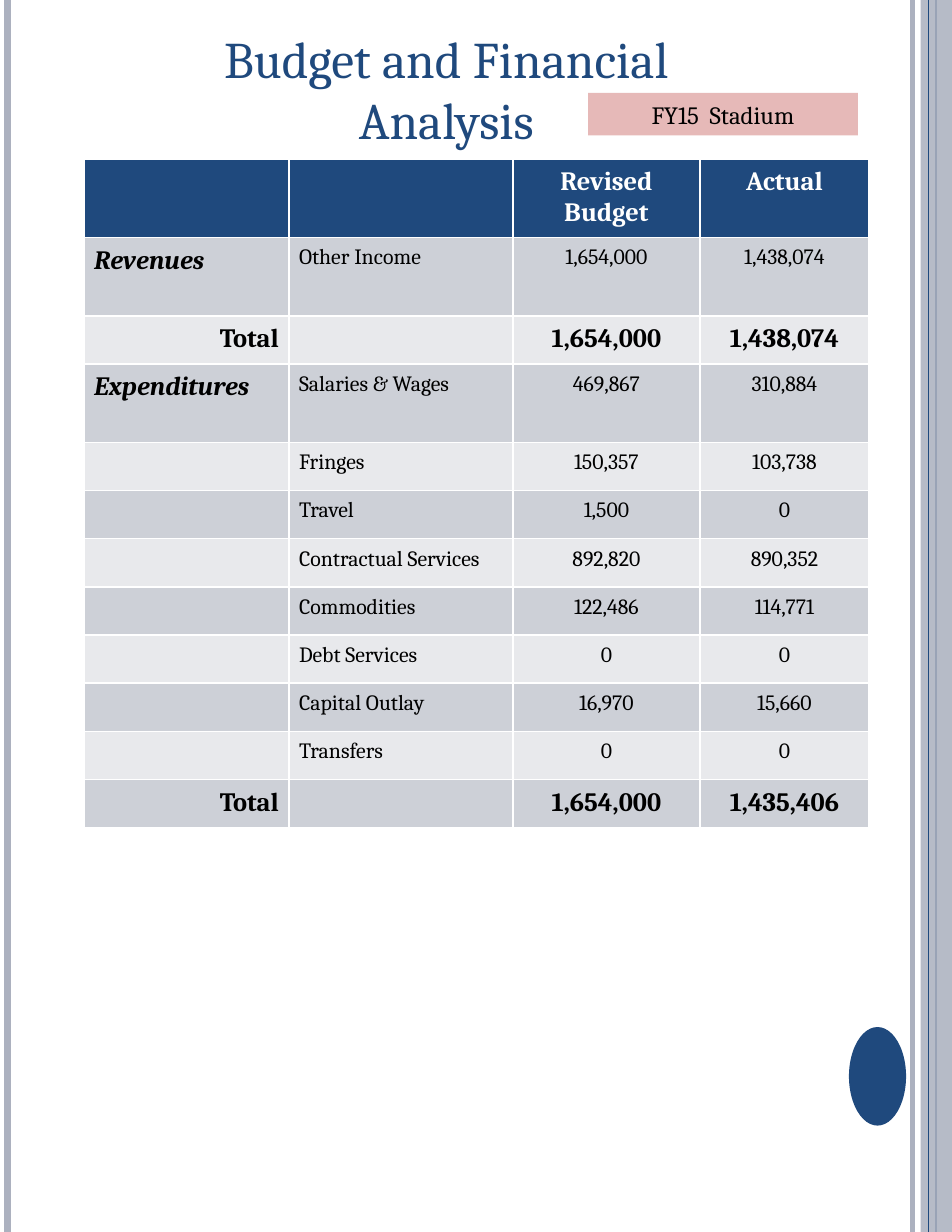
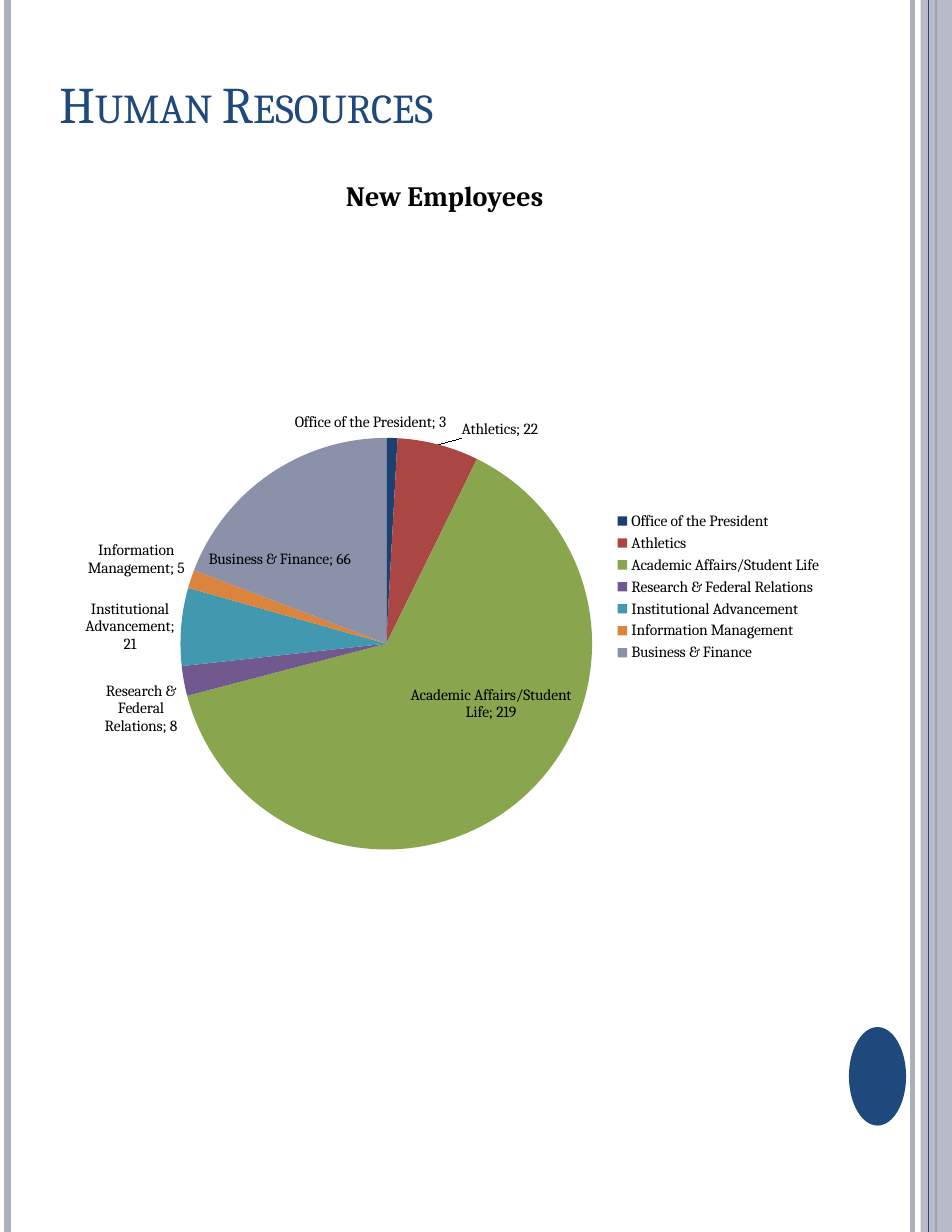
"""Build a stadium budget table slide and a new employees pie chart slide."""
from lxml import etree
from pptx import Presentation
from pptx.chart.data import CategoryChartData
from pptx.dml.color import RGBColor
from pptx.enum import chart as charts, shapes, text
from pptx.oxml import parse_xml
from pptx.oxml.ns import nsdecls, qn
from pptx.util import Pt

PX = 9144
FONT = "Cambria"
NAVY = RGBColor(0x1F, 0x49, 0x7D)
GREY = RGBColor(0xAC, 0xB1, 0xBF)
PINK = RGBColor(0xE6, 0xB9, 0xB8)
DARK_ROW = RGBColor(0xCD, 0xD0, 0xD7)
LIGHT_ROW = RGBColor(0xE8, 0xE9, 0xEC)
WHITE = RGBColor(0xFF, 0xFF, 0xFF)
BLACK = RGBColor(0, 0, 0)
SLICES = [RGBColor.from_string(c) for c in (
    "1C4170", "AA4643", "89A54E", "71588F", "4198AF", "DB843D", "8A91A9")]
LEFT, CENTER, RIGHT = text.PP_ALIGN.LEFT, text.PP_ALIGN.CENTER, text.PP_ALIGN.RIGHT


def write(tf, words, align=LEFT, color=BLACK, **formats):
    p = tf.paragraphs[0]
    p.alignment = align
    r = p.add_run()
    r.text = words
    r.font.color.rgb = color
    for name, value in {"name": FONT, **formats}.items():
        setattr(r.font, name, value)
    return r


def add_box(slide, kind, box, fill, alpha=100):
    sp = slide.shapes.add_shape(kind, *(n * PX for n in box))
    sp.shadow.inherit = False
    sp.fill.solid()
    sp.fill.fore_color.rgb = fill
    sp.line.fill.background()
    if alpha < 100:
        color = sp._element.spPr.find(".//" + qn("a:srgbClr"))
        etree.SubElement(color, qn("a:alpha")).set("val", str(alpha * 1000))
    tf = sp.text_frame
    tf.word_wrap = True
    for name, value in {"margin_left": 11, "margin_right": 11,
                        "margin_top": 6, "margin_bottom": 6}.items():
        setattr(tf, name, value * PX)
    return sp


prs = Presentation()
prs.slide_width, prs.slide_height = 850 * PX, 1100 * PX
RECT, OVAL = shapes.MSO_SHAPE.RECTANGLE, shapes.MSO_SHAPE.OVAL
budget, staff = [prs.slides.add_slide(prs.slide_layouts[6]) for _ in range(2)]

for slide in (budget, staff):
    for x, color, width in ((815, GREY, 3), (7, GREY, 4.5), (836, NAVY, 1.5),
                            (829, NAVY, 0.75)):
        if x == 829:
            add_box(slide, RECT, (822, 0, 28, 1100), GREY, 87)
        line = slide.shapes.add_connector(
            shapes.MSO_CONNECTOR.STRAIGHT, x * PX, 0, x * PX, 1100 * PX)
        line.line.color.rgb = color
        line.line.width = Pt(width)
        etree.SubElement(line._element.spPr, qn("a:effectLst"))
    add_box(slide, OVAL, (758, 917, 51, 88), NAVY)

sp = add_box(budget, RECT, (133, 25, 531, 108), WHITE)
sp.text_frame.vertical_anchor = text.MSO_ANCHOR.MIDDLE
write(sp.text_frame, "Budget and Financial Analysis", CENTER, NAVY, size=Pt(33))

rows = [
    ("", "", "Revised Budget", "Actual"),
    ("Revenues", "Other Income", "1,654,000", "1,438,074"),
    ("Total", "", "1,654,000", "1,438,074"),
    ("Expenditures", "Salaries & Wages", "469,867", "310,884"),
    ("", "Fringes", "150,357", "103,738"),
    ("", "Travel", "1,500", "0"),
    ("", "Contractual Services", "892,820", "890,352"),
    ("", "Commodities", "122,486", "114,771"),
    ("", "Debt Services", "0", "0"),
    ("", "Capital Outlay", "16,970", "15,660"),
    ("", "Transfers", "0", "0"),
    ("Total", "", "1,654,000", "1,435,406"),
]
frame = budget.shapes.add_table(
    len(rows), 4, 75 * PX, 142 * PX, 701 * PX, 616 * PX)
table = frame.table
for column, width in zip(table.columns, (183, 200, 167, 151)):
    column.width = width * PX
for i, row in enumerate(rows):
    section = row[0] in ("Revenues", "Expenditures")
    total = row[0] == "Total"
    table.rows[i].height = (70 if i == 0 or section else 43) * PX
    for j, words in enumerate(row):
        cell = table.cell(i, j)
        cell.fill.solid()
        cell.fill.fore_color.rgb = NAVY if i == 0 else DARK_ROW if i % 2 else LIGHT_ROW
        cell.margin_left = cell.margin_right = 9 * PX
        cell.margin_top = cell.margin_bottom = 7 * PX if words else 0
        if words:
            strong = i == 0 or j == 0 or total
            align = CENTER if j > 1 else RIGHT if total else LEFT
            write(cell.text_frame, words, align, BLACK if i else WHITE,
                  size=Pt(17 if strong else 14), bold=strong,
                  italic=section and j == 0)

sp = add_box(budget, RECT, (525, 83, 241, 38), PINK)
write(sp.text_frame, "FY15  Stadium", CENTER, size=Pt(16))

sp = add_box(staff, RECT, (42, 44, 694, 81), WHITE)
sp.text_frame.vertical_anchor = text.MSO_ANCHOR.BOTTOM
r = write(sp.text_frame, "Human Resources", LEFT, NAVY, size=Pt(33))
r._r.get_or_add_rPr().set("cap", "small")

data = CategoryChartData()
data.categories = [
    "Office of the President", "Athletics", "Academic Affairs/Student Life",
    "Research & Federal Relations", "Institutional Advancement",
    "Information Management", "Business & Finance"]
data.add_series("New Employees", (3, 22, 219, 8, 21, 5, 66))
chart = staff.shapes.add_chart(
    charts.XL_CHART_TYPE.PIE, 50 * PX, 133 * PX, 694 * PX, 782 * PX, data).chart
for name, value in {"name": FONT, "size": Pt(10)}.items():
    setattr(chart.font, name, value)
chart.font.color.rgb = BLACK
chart.has_title = True
write(chart.chart_title.text_frame, "New Employees", CENTER, size=Pt(18), bold=True)
chart.has_legend = True
chart.legend.position = charts.XL_LEGEND_POSITION.RIGHT
chart.legend.include_in_layout = False

plot = chart.plots[0]
plot.vary_by_categories = True
for i, color in enumerate(SLICES):
    fill = plot.series[0].points[i].format.fill
    fill.solid()
    fill.fore_color.rgb = color
plot.has_data_labels = True
labels = plot.data_labels
for name, value in {"show_value": True, "show_category_name": True,
                    "show_percentage": False,
                    "position": charts.XL_LABEL_POSITION.BEST_FIT}.items():
    setattr(labels, name, value)
separator = parse_xml(f'<c:separator {nsdecls("c")}>; </c:separator>')
labels._element.find(qn("c:showBubbleSize")).addnext(separator)

area = chart._chartSpace.chart.plotArea
for old in area.findall(qn("c:layout")):
    area.remove(old)
places = "".join(f'<c:{name} val="{value}"/>' for name, value in (
    ("layoutTarget", "inner"), ("xMode", "edge"), ("yMode", "edge"),
    ("x", 0.16), ("y", 0.33), ("w", 0.53), ("h", 0.47)))
area.insert(0, parse_xml(
    f'<c:layout {nsdecls("c")}><c:manualLayout>{places}</c:manualLayout></c:layout>'))

prs.save("out.pptx")
